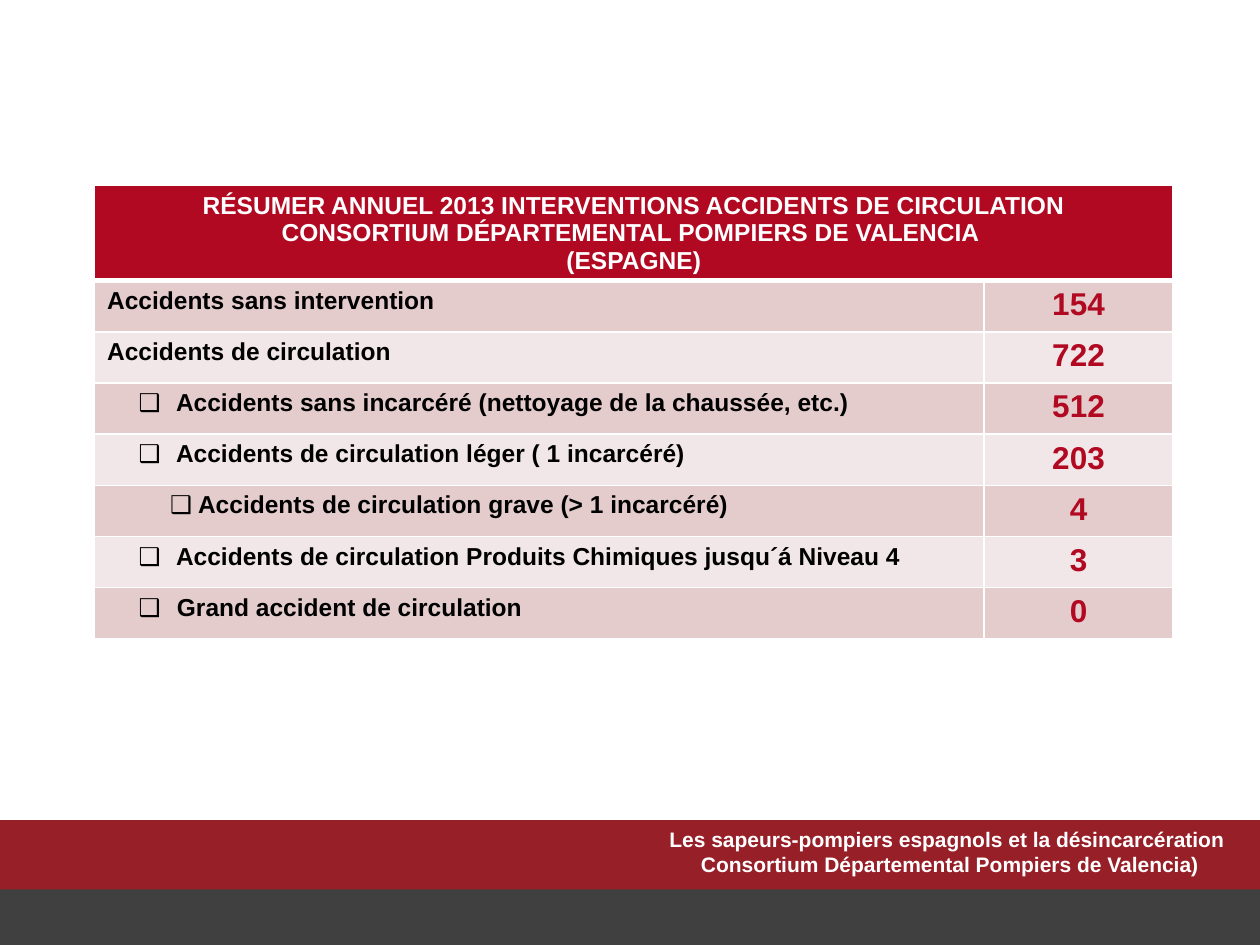
"""Build a slide with a table of yearly road accident figures."""
from lxml import etree
from pptx import Presentation
from pptx.dml.color import RGBColor
from pptx.enum.shapes import MSO_SHAPE
from pptx.enum.text import PP_ALIGN
from pptx.oxml.ns import qn
from pptx.util import Pt

RECT = MSO_SHAPE.RECTANGLE
CENTER = PP_ALIGN.CENTER
LEFT = PP_ALIGN.LEFT

WHITE = RGBColor(0xFF, 0xFF, 0xFF)
BLACK = RGBColor(0, 0, 0)
RED = RGBColor(0xB1, 0x09, 0x21)
BRICK = RGBColor(0x97, 0x1F, 0x28)
GREY = RGBColor(0x40, 0x40, 0x40)
BANDS = RGBColor(0xE4, 0xCC, 0xCD), RGBColor(0xF2, 0xE7, 0xE8)

FONT = "Arial"
WIDTH, HEIGHT = 720, 540
COLS = 508.3, 108
ROW = 29.25

TITLE = (
    "RÉSUMER ANNUEL 2013 INTERVENTIONS ACCIDENTS DE CIRCULATION\n"
    "CONSORTIUM DÉPARTEMENTAL POMPIERS DE VALENCIA \n"
    "(ESPAGNE)"
)
FOOTER = (
    "Les sapeurs-pompiers espagnols et la désincarcération \n"
    "Consortium Départemental Pompiers de Valencia)"
)
ROWS = [
    ("Accidents sans intervention", 154, None),
    ("Accidents de circulation", 722, None),
    (" Accidents sans incarcéré (nettoyage de la chaussée, etc.)", 512, -18),
    (" Accidents de circulation léger ( 1 incarcéré)", 203, -18),
    (" Accidents de circulation grave (> 1 incarcéré)", 4, 0),
    (" Accidents de circulation Produits Chimiques jusqu´á Niveau 4", 3, -18),
    (" Grand accident de circulation", 0, -18),
]


def add_band(slide, top, height, color):
    """Add a plain band across the slide."""
    band = slide.shapes.add_shape(RECT, 0, Pt(top), Pt(WIDTH), Pt(height))
    band.shadow.inherit = False
    band.fill.solid()
    band.fill.fore_color.rgb = color
    band.line.fill.background()


def add_bullet(para, indent):
    """Give a paragraph a box bullet and its indent."""
    para.level = 1
    props = para._p.get_or_add_pPr()
    props.set("marL", str(Pt(36)))
    props.set("indent", str(Pt(indent)))
    font = etree.SubElement(props, qn("a:buFont"))
    font.set("typeface", FONT)
    mark = etree.SubElement(props, qn("a:buChar"))
    mark.set("char", "❑")


def set_text(frame, text, size, color, align=CENTER, indent=None):
    """Write bold text, one paragraph a line."""
    frame.text = text
    for para in frame.paragraphs:
        para.alignment = align
        if indent is not None:
            add_bullet(para, indent)
        for run in para.runs:
            run.font.name = FONT
            run.font.size = Pt(size)
            run.font.bold = True
            run.font.color.rgb = color


def set_cell(cell, color, bottom=1):
    """Give a cell white borders and a fill."""
    props = cell._tc.get_or_add_tcPr()
    for side, width in zip("LRTB", (1, 1, 1, bottom)):
        line = etree.SubElement(props, qn(f"a:ln{side}"))
        line.set("w", str(Pt(width)))
        fill = etree.SubElement(line, qn("a:solidFill"))
        etree.SubElement(fill, qn("a:srgbClr")).set("val", str(WHITE))
    cell.fill.solid()
    cell.fill.fore_color.rgb = color


def add_figures(slide):
    """Add the table of accidents."""
    count = len(ROWS) + 1
    table = slide.shapes.add_table(
        count, 2, Pt(54), Pt(106), Pt(sum(COLS)), Pt(count * ROW)
    ).table
    for col, width in zip(table.columns, COLS):
        col.width = Pt(width)
    head, side = table.rows[0].cells
    head.merge(side)
    for cell in (head, side):
        set_cell(cell, RED, 3)
    set_text(head.text_frame, TITLE, 14, WHITE)
    for num, (label, value, indent) in enumerate(ROWS):
        name, total = table.rows[num + 1].cells
        for cell in (name, total):
            set_cell(cell, BANDS[num % 2])
        set_text(name.text_frame, label, 14, BLACK, LEFT, indent)
        set_text(total.text_frame, str(value), 18, RED)


def add_footer(slide):
    """Add the footer text."""
    box = slide.shapes.add_textbox(Pt(365.8), Pt(468.7), Pt(354.2), Pt(36))
    box.text_frame.word_wrap = True
    set_text(box.text_frame, FOOTER, 12, WHITE)


def main():
    """Build and save the slide."""
    deck = Presentation()
    deck.slide_width, deck.slide_height = Pt(WIDTH), Pt(HEIGHT)
    slide = deck.slides.add_slide(deck.slide_layouts[6])
    add_band(slide, 468.7, 71.3, BRICK)
    add_band(slide, 508.3, 31.7, GREY)
    add_figures(slide)
    add_footer(slide)
    deck.save("out.pptx")


if __name__ == "__main__":
    main()
